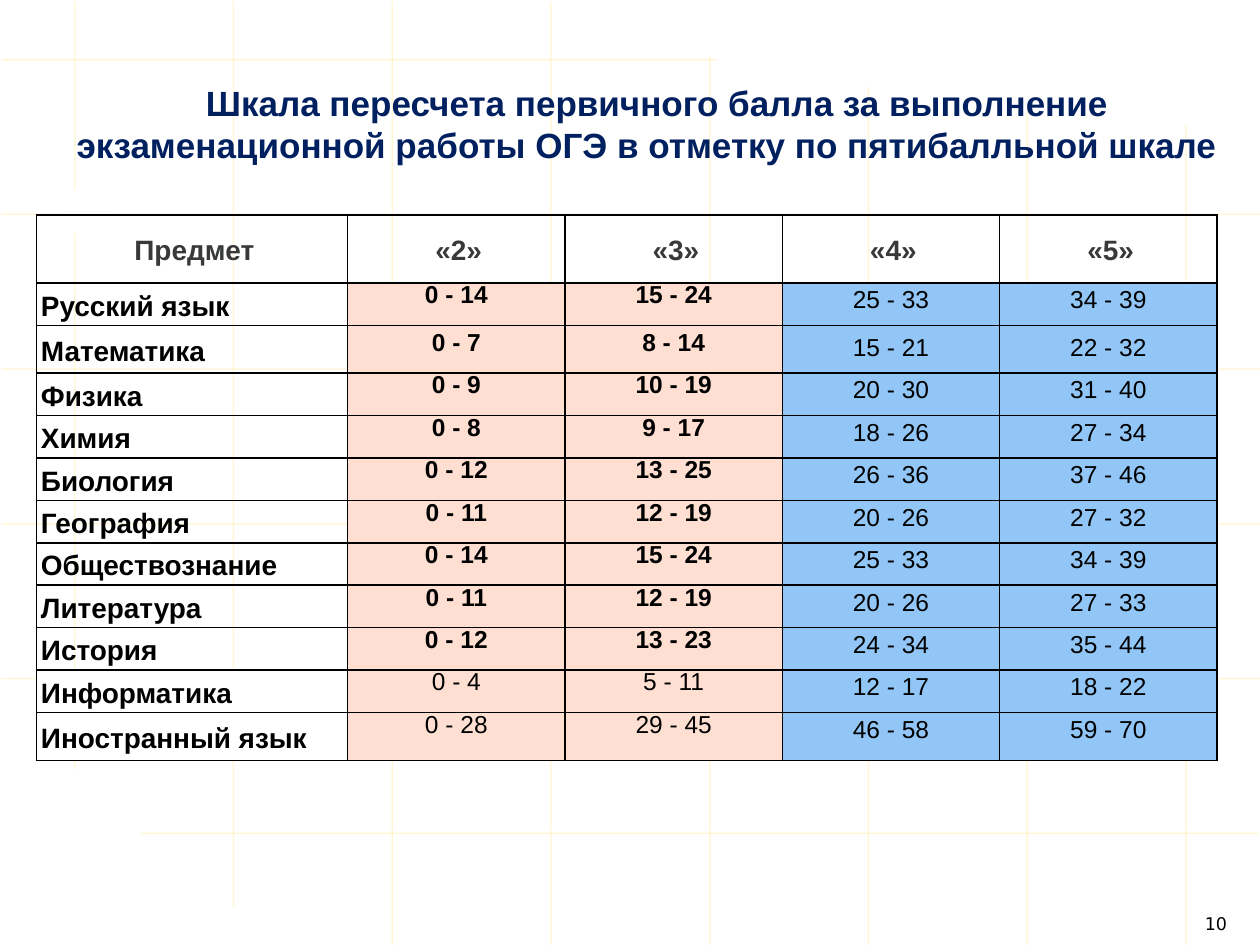
import dataclasses

import pptx
import pptx.dml.color
import pptx.enum.shapes
import pptx.enum.text
import pptx.oxml
import pptx.oxml.ns
import pptx.util

ALIGN = pptx.enum.text.PP_ALIGN
ANCHOR = pptx.enum.text.MSO_ANCHOR
SHAPE = pptx.enum.shapes.MSO_SHAPE
NS = pptx.oxml.ns.nsdecls("a")


@dataclasses.dataclass(frozen=True)
class Theme:
    font: str = "Arial"
    number_font: str = "DejaVu Sans"
    title: str = "002060"
    heading: str = "383A3A"
    ink: str = "000000"
    paper: str = "FFFFFF"
    glow: str = "FFCC00"
    low: str = "FEDFD2"
    high: str = "91C6F7"
    title_size: int = 20
    label_size: int = 16
    score_size: int = 14
    number_size: int = 10


THEME = Theme()

# The page is a grid of 100 columns by 75 rows
COLUMNS, ROWS = 100, 75
UNIT = pptx.util.Inches(0.1)

TITLE = ("Шкала пересчета первичного балла за выполнение",
         "экзаменационной работы ОГЭ в отметку по пятибалльной шкале")
HEADINGS = ("Предмет", "«2»", "«3»", "«4»", "«5»")
SCORES = (
    ("Русский язык", "0 - 14", "15 - 24", "25 - 33", "34 - 39"),
    ("Математика", "0 - 7", "8 - 14", "15 - 21", "22 - 32"),
    ("Физика", "0 - 9", "10 - 19", "20 - 30", "31 - 40"),
    ("Химия", "0 - 8", "9 - 17", "18 - 26", "27 - 34"),
    ("Биология", "0 - 12", "13 - 25", "26 - 36", "37 - 46"),
    ("География", "0 - 11", "12 - 19", "20 - 26", "27 - 32"),
    ("Обществознание", "0 - 14", "15 - 24", "25 - 33", "34 - 39"),
    ("Литература", "0 - 11", "12 - 19", "20 - 26", "27 - 33"),
    ("История", "0 - 12", "13 - 23", "24 - 34", "35 - 44"),
    ("Информатика", "0 - 4", "5 - 11", "12 - 17", "18 - 22"),
    ("Иностранный язык", "0 - 28", "29 - 45", "46 - 58", "59 - 70"),
)
PLAIN_SUBJECTS = ("Информатика", "Иностранный язык")
LOOSE_SUBJECT = "Математика"


def grid(*counts):
    return [round(count * UNIT) for count in counts]


def color(value):
    return pptx.dml.color.RGBColor.from_string(value)


def add_span(para, text, size, ink, bold=False, font=THEME.font):
    span = para.add_run()
    span.text = text
    span.font.name = font
    span.font.size = pptx.util.Pt(size)
    span.font.bold = bold
    span.font.color.rgb = color(ink)


def add_grid_line(page, x1, y1, x2, y2):
    line = page.shapes.add_connector(
        pptx.enum.shapes.MSO_CONNECTOR.STRAIGHT, *grid(x1, y1, x2, y2))
    line.line.width = pptx.util.Pt(0.75)
    line.line.color.rgb = color(THEME.paper)
    properties = line._element.spPr
    tint = properties.find(".//" + pptx.oxml.ns.qn("a:srgbClr"))
    tint.append(pptx.oxml.parse_xml(f'<a:alpha {NS} val="50000"/>'))
    properties.append(pptx.oxml.parse_xml(
        f'<a:effectLst {NS}><a:outerShdw blurRad="0" dist="17780" dir="2700000">'
        f'<a:srgbClr val="{THEME.glow}"><a:alpha val="35000"/></a:srgbClr>'
        '</a:outerShdw></a:effectLst>'))


def add_background(page):
    # Vertical lines, each with its own start and end
    spans = ((0, 60.9), (0, 71.9), (0, ROWS), (0, ROWS),
             (4.3, ROWS), (6.8, ROWS), (8.5, ROWS), (9.8, ROWS))
    for index, (top, bottom) in enumerate(spans):
        x = 5.8 + 12.6 * index
        add_grid_line(page, x, top, x, bottom)
    # Horizontal lines
    spans = ((0, 56.8), *[(0, COLUMNS)] * 4, (11.1, 99.7))
    for index, (left, right) in enumerate(spans):
        y = 4.6 + 12.28 * index
        add_grid_line(page, right, y, left, y)


def add_mask(page, kind, area, width):
    mask = page.shapes.add_shape(kind, *grid(*area))
    mask.shadow.inherit = False
    mask.fill.solid()
    mask.fill.fore_color.rgb = color(THEME.paper)
    mask.line.color.rgb = color(THEME.paper)
    mask.line.width = pptx.util.Pt(width)


def add_text(page, area, lines, anchor=ANCHOR.TOP, **style):
    frame = page.shapes.add_textbox(*grid(*area)).text_frame
    frame.word_wrap = True
    frame.vertical_anchor = anchor
    for index, (text, align) in enumerate(lines):
        para = frame.add_paragraph() if index else frame.paragraphs[0]
        para.alignment = align
        add_span(para, text, **style)


def set_borders(cell):
    properties = cell._tc.get_or_add_tcPr()
    for index, side in enumerate(("lnL", "lnR", "lnT", "lnB")):
        properties.insert(index, pptx.oxml.parse_xml(
            f'<a:{side} {NS} w="12700"><a:solidFill><a:srgbClr val="{THEME.ink}"/>'
            f'</a:solidFill><a:prstDash val="solid"/></a:{side}>'))


def prepare_cell(cell, fill=None, inset=0, anchor=ANCHOR.TOP):
    cell.margin_left = cell.margin_right = 0
    cell.margin_top = cell.margin_bottom = grid(inset)[0]
    cell.vertical_anchor = anchor
    if fill:
        cell.fill.solid()
        cell.fill.fore_color.rgb = color(fill)
    else:
        cell.fill.background()
    set_borders(cell)
    return cell.text_frame.paragraphs[0]


def set_loose(para, margin=0.0):
    para.line_spacing = 1.15
    para.space_after = pptx.util.Pt(10)
    para._p.get_or_add_pPr().set("marL", str(grid(margin)[0]))


def set_tight(para):
    para.line_spacing = pptx.util.Pt(14.9)
    para.space_before = pptx.util.Pt(12)
    properties = para._p.get_or_add_pPr()
    properties.set("marL", "0")
    properties.set("indent", str(grid(-2.5)[0]))


def fill_label(cell, text, ink, align, fill=None):
    para = prepare_cell(cell, fill, anchor=ANCHOR.MIDDLE)
    para.alignment = align
    set_loose(para, 0.35)
    add_span(para, text, THEME.label_size, ink, bold=True)


def fill_score(cell, text, passing, bold, loose):
    fill, inset = (THEME.high, 0.4) if passing else (THEME.low, 0)
    para = prepare_cell(cell, fill, inset)
    para.alignment = ALIGN.CENTER
    if loose:
        set_loose(para)
    else:
        set_tight(para)
    add_span(para, text, THEME.score_size, THEME.ink, bold)


def add_score_table(page):
    head, tall, total = 5.4, 3.8, 43.3
    common = (total - head - 2 * tall) / (len(SCORES) - 2)
    heights = [head, common, tall, *[common] * (len(SCORES) - 3), tall]
    widths = [24.7] + [17.25] * 4
    table = page.shapes.add_table(
        len(heights), len(widths), *grid(2.9, 17.05, sum(widths), total)).table
    table.first_row = table.horz_banding = False
    for column, width in zip(table.columns, grid(*widths)):
        column.width = width
    for row, height in zip(table.rows, grid(*heights)):
        row.height = height

    for index, heading in enumerate(HEADINGS):
        fill_label(table.cell(0, index), heading, THEME.heading, ALIGN.CENTER)
    for row, (subject, *scores) in enumerate(SCORES, 1):
        plain = subject in PLAIN_SUBJECTS
        fill_label(table.cell(row, 0), subject, THEME.ink, ALIGN.LEFT,
                   THEME.paper if plain else None)
        for column, score in enumerate(scores, 1):
            passing = column > 2
            fill_score(table.cell(row, column), score, passing,
                       not (passing or plain), subject == LOOSE_SUBJECT)


def main():
    deck = pptx.Presentation()
    deck.slide_width, deck.slide_height = grid(COLUMNS, ROWS)
    page = deck.slides.add_slide(deck.slide_layouts[6])
    add_background(page)
    add_mask(page, SHAPE.RECTANGLE, (82.9, 0.2, 17.1, 9.1), 0.75)
    # Title and page number
    add_text(page, (5.1, 6, 94.1, 8.2), zip(TITLE, (ALIGN.CENTER, ALIGN.LEFT)),
             size=THEME.title_size, ink=THEME.title, bold=True)
    add_text(page, (93, 71.6, 7, 3.4), [("10", ALIGN.CENTER)], ANCHOR.MIDDLE,
             size=THEME.number_size, ink=THEME.ink, font=THEME.number_font)
    add_mask(page, SHAPE.OVAL, (5.4, 14.7, 3.2, 4.1), 2)
    add_score_table(page)
    deck.save("out.pptx")


if __name__ == "__main__":
    main()
